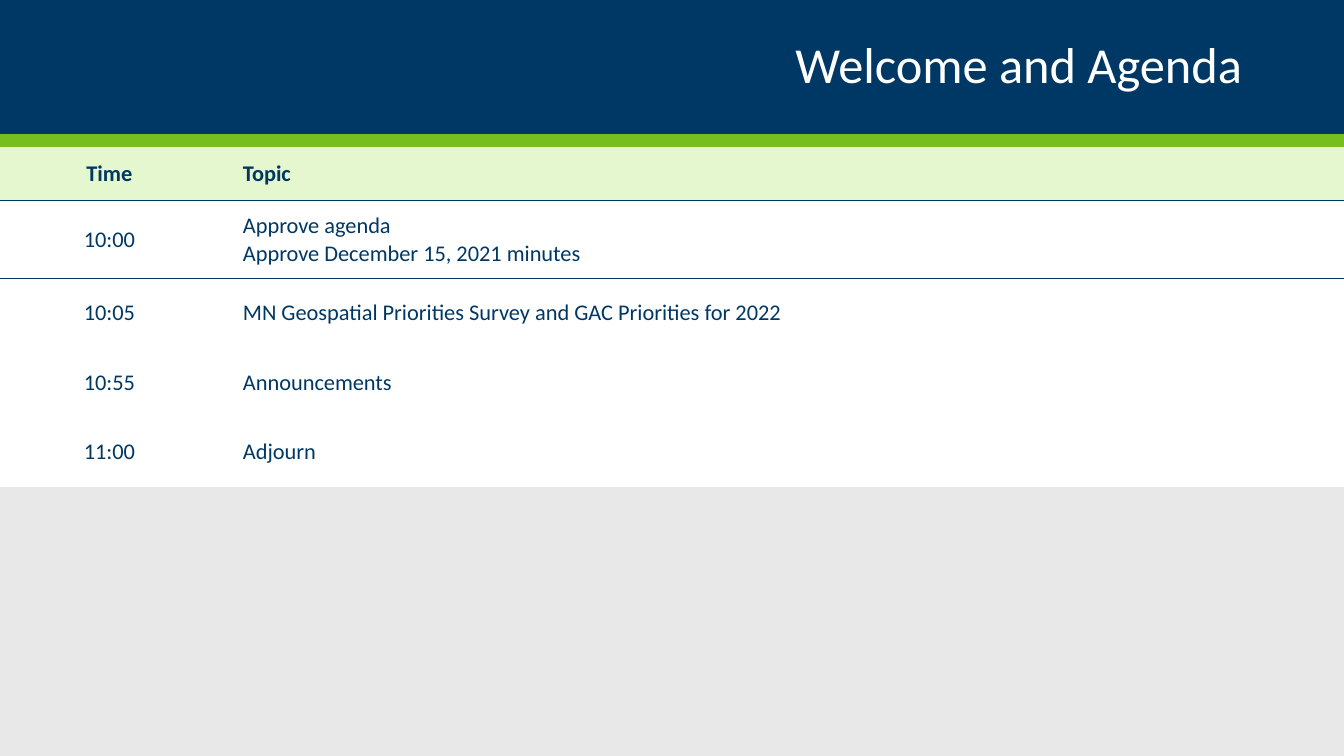
from lxml import etree
from pptx import Presentation, util as u
from pptx.dml.color import RGBColor
from pptx.enum import shapes, text
from pptx.oxml import ns

NAVY = RGBColor(0x00, 0x38, 0x65)
GREEN = RGBColor(0x78, 0xBE, 0x21)
PALE_GREEN = RGBColor(0xE4, 0xF7, 0xCE)
GREY = RGBColor(0xE8, 0xE8, 0xE8)
WHITE = RGBColor(0xFF, 0xFF, 0xFF)

WIDTH, HEIGHT = u.Inches(13.33), u.Inches(7.5)
BANNER = u.Inches(1.33)
STRIPE = u.Inches(0.13)
TIME_COLUMN = u.Inches(2.17)
ROW_HEIGHTS = [0.53, 0.77, 0.69, 0.69, 0.69]
PLAIN_TABLE = "{2D5ABB26-0587-4C30-8999-92F81FD0307C}"

AGENDA = [
    ("Time", "Topic"),
    ("10:00", "Approve agenda\nApprove December 15, 2021 minutes"),
    ("10:05", "MN Geospatial Priorities Survey and GAC Priorities for 2022"),
    ("10:55", "Announcements"),
    ("11:00", "Adjourn"),
]


def write(tf, content, size=16, color=NAVY, bold=False,
          align=text.PP_ALIGN.LEFT, spacing=None):
    tf.word_wrap = True
    for i, line in enumerate(content.split("\n")):
        p = tf.add_paragraph() if i else tf.paragraphs[0]
        p.alignment = align
        p.line_spacing = spacing
        r = p.add_run()
        r.text = line
        r.font.name = "Calibri"
        r.font.size = u.Pt(size)
        r.font.bold = bold
        r.font.color.rgb = color


def add_band(s, top, height, color):
    sp = s.shapes.add_shape(shapes.MSO_SHAPE.RECTANGLE, 0, top, WIDTH, height)
    sp.shadow.inherit = False
    sp.fill.solid()
    sp.fill.fore_color.rgb = color
    sp.line.fill.background()


def add_title(s, content):
    sp = s.shapes.add_textbox(u.Inches(0.92), u.Inches(0.17),
                              u.Inches(11.5), u.Inches(1))
    sp.text_frame.vertical_anchor = text.MSO_ANCHOR.MIDDLE
    write(sp.text_frame, content, size=36, color=WHITE,
          align=text.PP_ALIGN.RIGHT, spacing=0.9)


def add_border(cell, side, color):
    line = etree.Element(ns.qn(f"a:ln{side}"), w=str(u.Pt(1)))
    fill = etree.SubElement(line, ns.qn("a:solidFill"))
    etree.SubElement(fill, ns.qn("a:srgbClr"), val=str(color))
    cell._tc.get_or_add_tcPr().insert(0, line)


def format_cell(cell, content, header, time):
    cell.vertical_anchor = text.MSO_ANCHOR.MIDDLE
    cell.margin_left = u.Inches(0.12 if time else 0.24)
    cell.margin_right = u.Inches(0.12)
    cell.margin_top = cell.margin_bottom = u.Inches(0.06 if header else 0.12)
    cell.fill.solid()
    cell.fill.fore_color.rgb = PALE_GREEN if header else WHITE
    write(cell.text_frame, content, bold=header,
          align=text.PP_ALIGN.CENTER if time else text.PP_ALIGN.LEFT)


def add_agenda(s, top):
    frame = s.shapes.add_table(len(AGENDA), 2, 0, top, WIDTH,
                               u.Inches(sum(ROW_HEIGHTS)))
    table = frame.table
    table.first_row = table.horz_banding = False
    table._tbl.tblPr.find(ns.qn("a:tableStyleId")).text = PLAIN_TABLE
    table.columns[0].width = TIME_COLUMN
    table.columns[1].width = WIDTH - TIME_COLUMN
    for i, (height, entries) in enumerate(zip(ROW_HEIGHTS, AGENDA)):
        table.rows[i].height = u.Inches(height)
        for j, content in enumerate(entries):
            format_cell(table.cell(i, j), content, header=i == 0, time=j == 0)
    for j in range(2):
        add_border(table.cell(0, j), "B", NAVY)
        add_border(table.cell(1, j), "T", NAVY)


def main():
    prs = Presentation()
    prs.slide_width, prs.slide_height = WIDTH, HEIGHT
    s = prs.slides.add_slide(prs.slide_layouts[6])
    s.background.fill.solid()
    s.background.fill.fore_color.rgb = GREY
    add_band(s, 0, BANNER, NAVY)
    add_band(s, BANNER, STRIPE, GREEN)
    add_title(s, "Welcome and Agenda")
    add_agenda(s, BANNER + STRIPE)
    prs.save("out.pptx")


if __name__ == "__main__":
    main()
